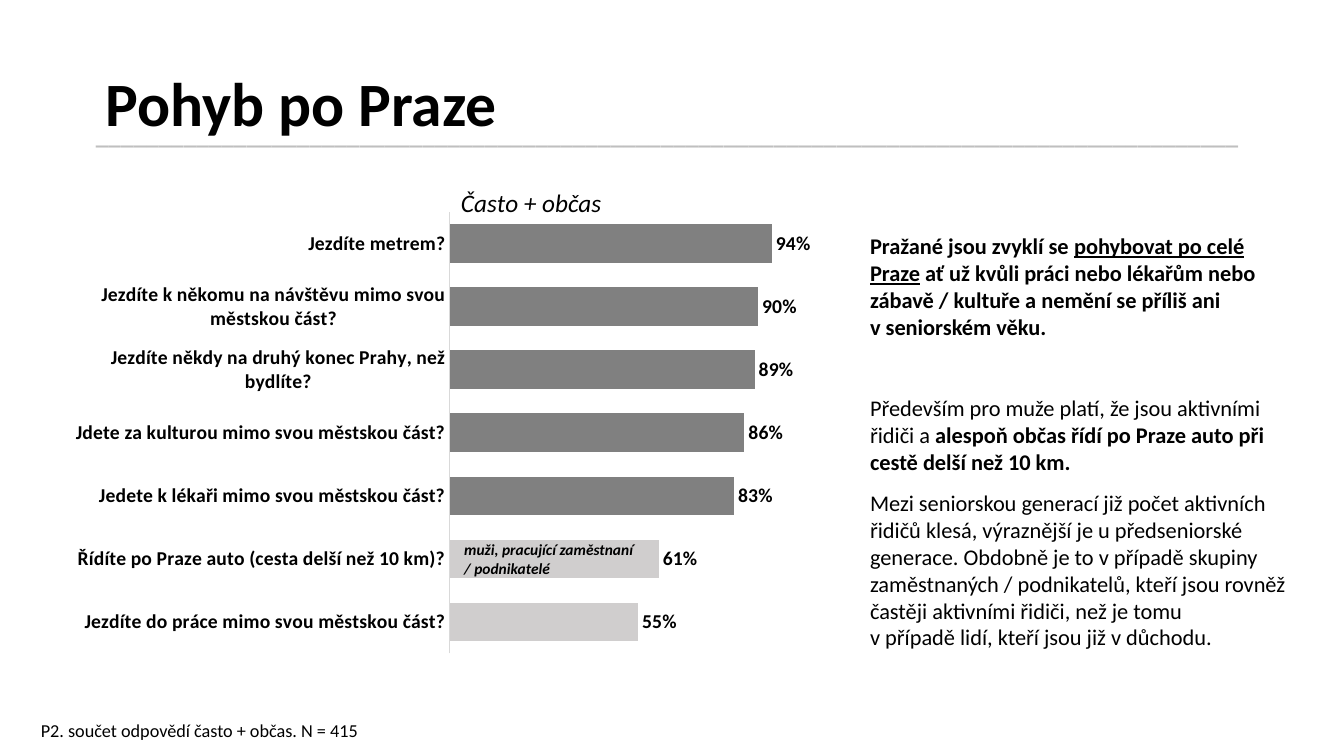
import pptx
import pptx.util
import pptx.chart.data
import pptx.dml.color
import pptx.enum.chart
import pptx.enum.text
import pptx.oxml

W, H = 13.33, 7.5
FONT = "Calibri"
prs = pptx.Presentation()
prs.slide_width = pptx.util.Inches(W)
prs.slide_height = pptx.util.Inches(H)
s = prs.slides.add_slide(prs.slide_layouts[6])


def style(font, size, color="000000", bold=False, italic=False, underline=False):
    font.name, font.size = FONT, pptx.util.Pt(size)
    font.bold, font.italic, font.underline = bold, italic, underline
    font.color.rgb = pptx.dml.color.RGBColor.from_string(color)


def add_text(left, top, width, height, paragraphs, size, color="000000"):
    """Place paragraphs of (text, marks) runs; marks hold b, i or u."""
    box = [pptx.util.Inches(v) for v in (left * W, top * H, width * W, height * H)]
    tf = s.shapes.add_textbox(*box).text_frame
    tf.word_wrap = True
    for i, runs in enumerate(paragraphs):
        p = tf.paragraphs[0] if i == 0 else tf.add_paragraph()
        for text, marks in runs:
            for j, line in enumerate(text.split("\n")):
                if j:
                    p.add_line_break()
                r = p.add_run()
                r.text = line
                style(r.font, size, color, "b" in marks, "i" in marks, "u" in marks)
    return tf


# Rule under the heading, then the heading
tf = add_text(0.064, 0.149, 0.873, 0.055, [[("_" * 91, "b")]], 18, "BFBFBF")
tf.paragraphs[0].line_spacing = 1.07
tf = add_text(0.071, 0.044, 0.808, 0.193, [[("Pohyb po Praze", "b")]], 44)
tf.vertical_anchor = pptx.enum.text.MSO_ANCHOR.MIDDLE
tf.paragraphs[0].line_spacing = 0.9

# Commentary on the right
comments = [
    [("Pražané jsou zvyklí se ", "b"), ("pohybovat po celé Praze", "bu"),
     (" ať už kvůli práci nebo lékařům nebo zábavě / kultuře a nemění se příliš ani \n"
      "v seniorském věku.", "b")],
    [("Především pro muže platí, že jsou aktivními řidiči a ", ""),
     ("alespoň občas řídí po Praze auto při cestě delší než 10 km.", "b")],
    [("Mezi seniorskou generací již počet aktivních řidičů klesá, výraznější je u "
      "předseniorské generace. Obdobně je to v případě skupiny zaměstnaných / "
      "podnikatelů, kteří jsou rovněž častěji aktivními řidiči, než je tomu \n"
      "v případě lidí, kteří jsou již v důchodu.", "")],
]
tf = add_text(0.64, 0.301, 0.325, 0.643, comments, 16)
for p, gap in zip(tf.paragraphs, (10, 39, 10)):
    p.space_before = pptx.util.Pt(gap)

# Footnote
add_text(0.023, 0.945, 0.26, 0.043,
         [[("P2. součet odpovědí často + občas. N = 415", "")]], 13)

# Bar chart, listed from bottom to top
answers = {
    "Jezdíte do práce mimo svou městskou část?": 0.55,
    "Řídíte po Praze auto (cesta delší než 10 km)?": 0.61,
    "Jedete k lékaři mimo svou městskou část?": 0.83,
    "Jdete za kulturou mimo svou městskou část?": 0.86,
    "Jezdíte někdy na druhý konec Prahy, než bydlíte?": 0.89,
    "Jezdíte k někomu na návštěvu mimo svou městskou část?": 0.9,
    "Jezdíte metrem?": 0.94,
}
data = pptx.chart.data.CategoryChartData(number_format="0%")
data.categories = list(answers)
data.add_series("Často + občas", list(answers.values()))
area = [pptx.util.Inches(v) for v in (0.05 * W, 0.201 * H, 0.557 * W, 0.684 * H)]
chart = s.shapes.add_chart(
    pptx.enum.chart.XL_CHART_TYPE.BAR_CLUSTERED, *area, data).chart
style(chart.font, 10)
chart.has_legend = False
chart.has_title = True
r = chart.chart_title.text_frame.paragraphs[0].add_run()
r.text = "Často + občas"
style(r.font, 18, italic=True)
chart.chart_title.include_in_layout = False

# Axes
axis = chart.category_axis
style(axis.tick_labels.font, 14, bold=True)
axis.major_tick_mark = pptx.enum.chart.XL_TICK_MARK.NONE
axis.format.line.color.rgb = pptx.dml.color.RGBColor.from_string("D9D9D9")
axis.format.line.width = pptx.util.Pt(0.75)
axis = chart.value_axis
axis.minimum_scale, axis.maximum_scale = 0, 1
axis.has_major_gridlines = False
axis.visible = False

# Bars and labels: the two lowest answers are light
plot = chart.plots[0]
plot.gap_width = 65
plot.vary_by_categories = False
series = plot.series[0]
fills = [series.format.fill] + [series.points[i].format.fill for i in range(2)]
for fill, color in zip(fills, ("808080", "D0CECE", "D0CECE")):
    fill.solid()
    fill.fore_color.rgb = pptx.dml.color.RGBColor.from_string(color)
labels = series.data_labels
labels.show_value = True
labels.number_format, labels.number_format_is_linked = "0%", False
labels.position = pptx.enum.chart.XL_LABEL_POSITION.OUTSIDE_END
style(labels.font, 14, bold=True)

# Fixed places of the plot and the chart title, as shares of the chart
NS = "http://schemas.openxmlformats.org/drawingml/2006/chart"
places = [
    (chart.chart_title._element, "",
     {"xMode": "edge", "yMode": "edge", "x": 0.52, "y": 0.055}),
    (chart._chartSpace.chart.plotArea, "inner",
     {"xMode": "edge", "yMode": "edge", "x": 0.511, "y": 0.116, "w": 0.458, "h": 0.854}),
]
for parent, target, values in places:
    for old in parent.findall(f"{{{NS}}}layout"):
        parent.remove(old)
    inner = f'<c:layoutTarget val="{target}"/>' if target else ""
    inner += "".join(f'<c:{k} val="{v}"/>' for k, v in values.items())
    layout = pptx.oxml.parse_xml(
        f'<c:layout xmlns:c="{NS}"><c:manualLayout>{inner}</c:manualLayout></c:layout>')
    text = parent.find(f"{{{NS}}}tx")
    parent.insert(0 if text is None else 1, layout)

# Note inside the driving bar
add_text(0.338, 0.708, 0.143, 0.063,
         [[("muži, pracující zaměstnaní / podnikatelé", "bi")]], 11)

prs.save("out.pptx")
